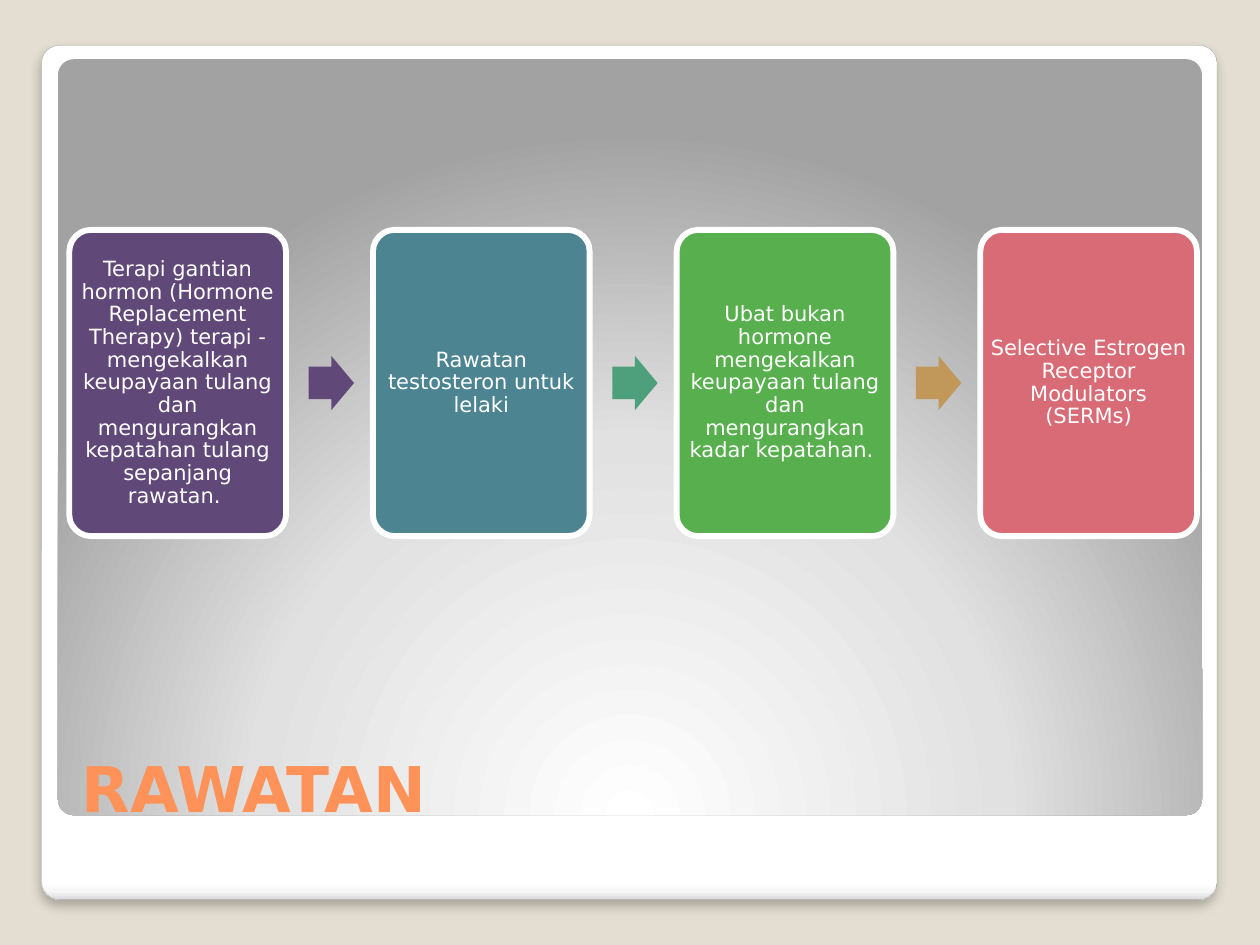
from pptx import Presentation
from pptx.dml.color import RGBColor
from pptx.enum.shapes import MSO_SHAPE
from pptx.enum.text import MSO_ANCHOR, PP_ALIGN
from pptx.oxml import parse_xml
from pptx.oxml.ns import nsdecls, qn
from pptx.util import Inches, Pt

ROUNDED, ARROW = MSO_SHAPE.ROUNDED_RECTANGLE, MSO_SHAPE.RIGHT_ARROW
MIDDLE, BOTTOM, CENTER = MSO_ANCHOR.MIDDLE, MSO_ANCHOR.BOTTOM, PP_ALIGN.CENTER
FONT = "DejaVu Sans"

COLORS = {
    "background": "E3DED1", "frame_line": "A4A4A4", "title": "FF9258", "white": "FFFFFF",
    "purple": "604878", "teal": "4C8492", "sea": "4DA07B",
    "green": "57AF4D", "sand": "C19859", "rose": "D96B77",
}

TITLE = "RAWATAN"
# treatment, card colour, colour of the arrow that follows
TREATMENTS = [
    ("Terapi gantian hormon (Hormone Replacement Therapy) terapi - mengekalkan "
     "keupayaan tulang dan mengurangkan kepatahan tulang sepanjang rawatan. ",
     "purple", "purple"),
    ("Rawatan testosteron untuk lelaki", "teal", "sea"),
    ("Ubat bukan hormone mengekalkan keupayaan tulang dan mengurangkan kadar kepatahan. ",
     "green", "sand"),
    ("Selective Estrogen Receptor Modulators (SERMs)", "rose", None),
]

FRAME_STOPS = [(0, "FFFFFF"), (98, "FFFFFF"), (99, "F7F7F7"), (100, "DADADA")]
FRAME_SHADE = '<a:lin ang="5400000" scaled="0"/>'
PANEL_STOPS = [(0, "FFFFFF"), (55, "E1E1E1"), (100, "A2A2A2")]
PANEL_SHADE = ('<a:path path="circle">'
               '<a:fillToRect l="50000" t="175000" r="50000" b="-75000"/></a:path>')
FRAME_SHADOW = (f'<a:outerShdw {nsdecls("a")} blurRad="{Pt(6)}" dist="{Pt(4)}" dir="5400000" '
                'algn="t" rotWithShape="0">'
                '<a:srgbClr val="000000"><a:alpha val="25000"/></a:srgbClr></a:outerShdw>')

ROW_LEFT, ROW_WIDTH, ROW_MIDDLE = 0.55, 8.95, 3.04
CARD_W, CARD_H = 1.72, 2.43
ARROW_W, ARROW_H = 0.36, 0.43
PITCH = (ROW_WIDTH - CARD_W) / (len(TREATMENTS) - 1)
ARROW_OFFSET = 1.9


def color(name):
    return RGBColor.from_string(COLORS[name])


def add_shape(slide, kind, box, adjustments, fill=None):
    shape = slide.shapes.add_shape(kind, *map(Inches, box))
    for index, value in enumerate(adjustments):
        shape.adjustments[index] = value
    shape.shadow.inherit = False
    shape.line.fill.background()
    if fill:
        shape.fill.solid()
        shape.fill.fore_color.rgb = color(fill)
    return shape


def set_gradient(shape, stops, shade):
    marks = "".join(f'<a:gs pos="{pos * 1000}"><a:srgbClr val="{rgb}"/></a:gs>'
                    for pos, rgb in stops)
    gradient = parse_xml(f'<a:gradFill {nsdecls("a")} rotWithShape="1">'
                         f'<a:gsLst>{marks}</a:gsLst>{shade}</a:gradFill>')
    shape._element.spPr.find(qn("a:prstGeom")).addnext(gradient)


def set_line(shape, name, width):
    shape.line.color.rgb = color(name)
    shape.line.width = Pt(width)


def write(shape, text, size, name, anchor):
    """Fill the shape with one paragraph and return that paragraph."""
    frame = shape.text_frame
    frame.word_wrap = True
    frame.vertical_anchor = anchor
    paragraph = frame.paragraphs[0]
    paragraph.text = text
    paragraph.font.name = FONT
    paragraph.font.size = Pt(size)
    paragraph.font.color.rgb = color(name)
    return paragraph


def add_backdrop(slide):
    slide.background.fill.solid()
    slide.background.fill.fore_color.rgb = color("background")
    frame = add_shape(slide, ROUNDED, (0.33, 0.36, 9.33, 6.78), [0.021])
    set_gradient(frame, FRAME_STOPS, FRAME_SHADE)
    set_line(frame, "frame_line", 0.16)
    frame._element.spPr.find(qn("a:effectLst")).append(parse_xml(FRAME_SHADOW))
    panel = add_shape(slide, ROUNDED, (0.46, 0.47, 9.08, 6), [0.021])
    set_gradient(panel, PANEL_STOPS, PANEL_SHADE)


def add_card(slide, left, text, fill):
    box = (left, ROW_MIDDLE - CARD_H / 2, CARD_W, CARD_H)
    card = add_shape(slide, ROUNDED, box, [0.1], fill)
    set_line(card, "white", 3.35)
    frame = card.text_frame
    # the rounded corners already inset the text
    frame.margin_left = frame.margin_right = frame.margin_top = frame.margin_bottom = 0
    paragraph = write(card, text, 12, "white", MIDDLE)
    paragraph.alignment = CENTER
    paragraph.line_spacing = 0.9


def main():
    deck = Presentation()
    deck.slide_width, deck.slide_height = Inches(10), Inches(7.5)
    slide = deck.slides.add_slide(deck.slide_layouts[6])
    add_backdrop(slide)

    title = slide.shapes.add_textbox(*map(Inches, (ROW_LEFT, 5.45, ROW_WIDTH, 1.15)))
    write(title, TITLE, 36, "title", BOTTOM).font.bold = True

    for column, (treatment, card_fill, arrow_fill) in enumerate(TREATMENTS):
        left = ROW_LEFT + column * PITCH
        add_card(slide, left, treatment, card_fill)
        if arrow_fill:
            box = (left + ARROW_OFFSET, ROW_MIDDLE - ARROW_H / 2, ARROW_W, ARROW_H)
            add_shape(slide, ARROW, box, [0.6, 0.5], arrow_fill)

    deck.save("out.pptx")


if __name__ == "__main__":
    main()
